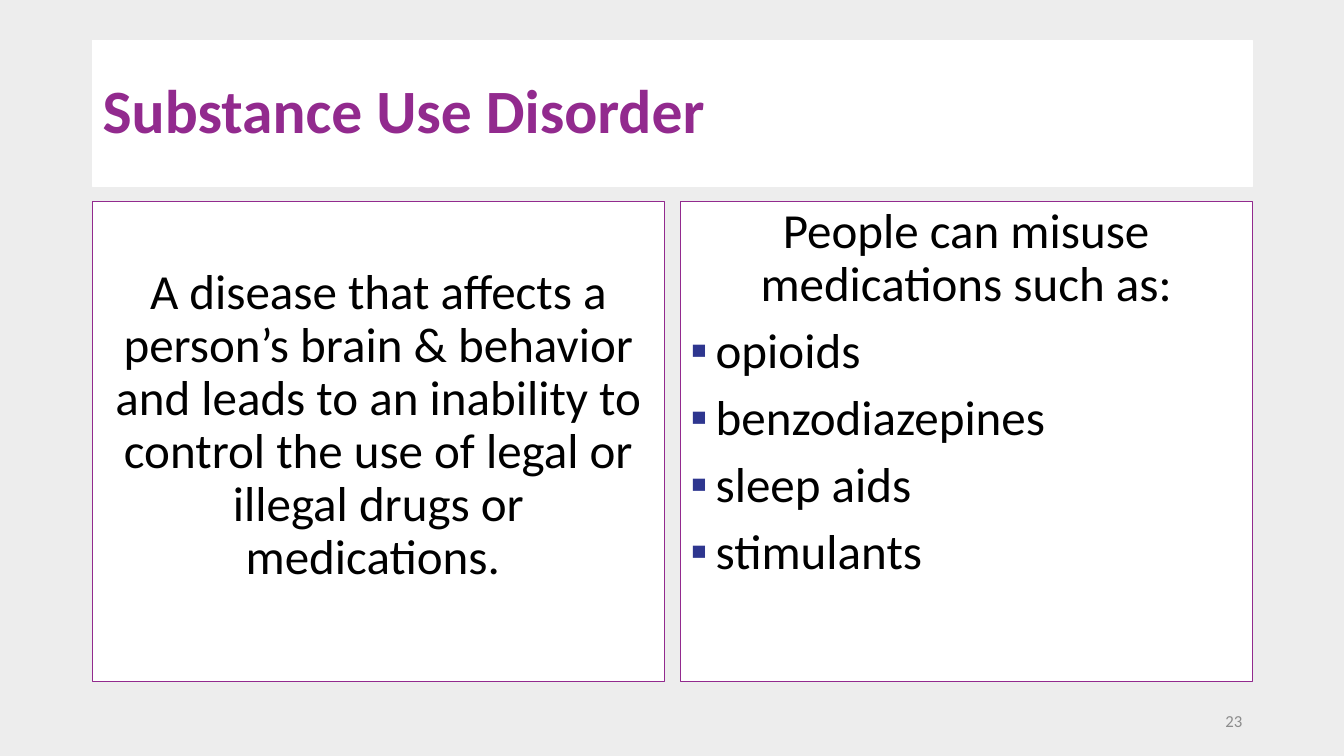
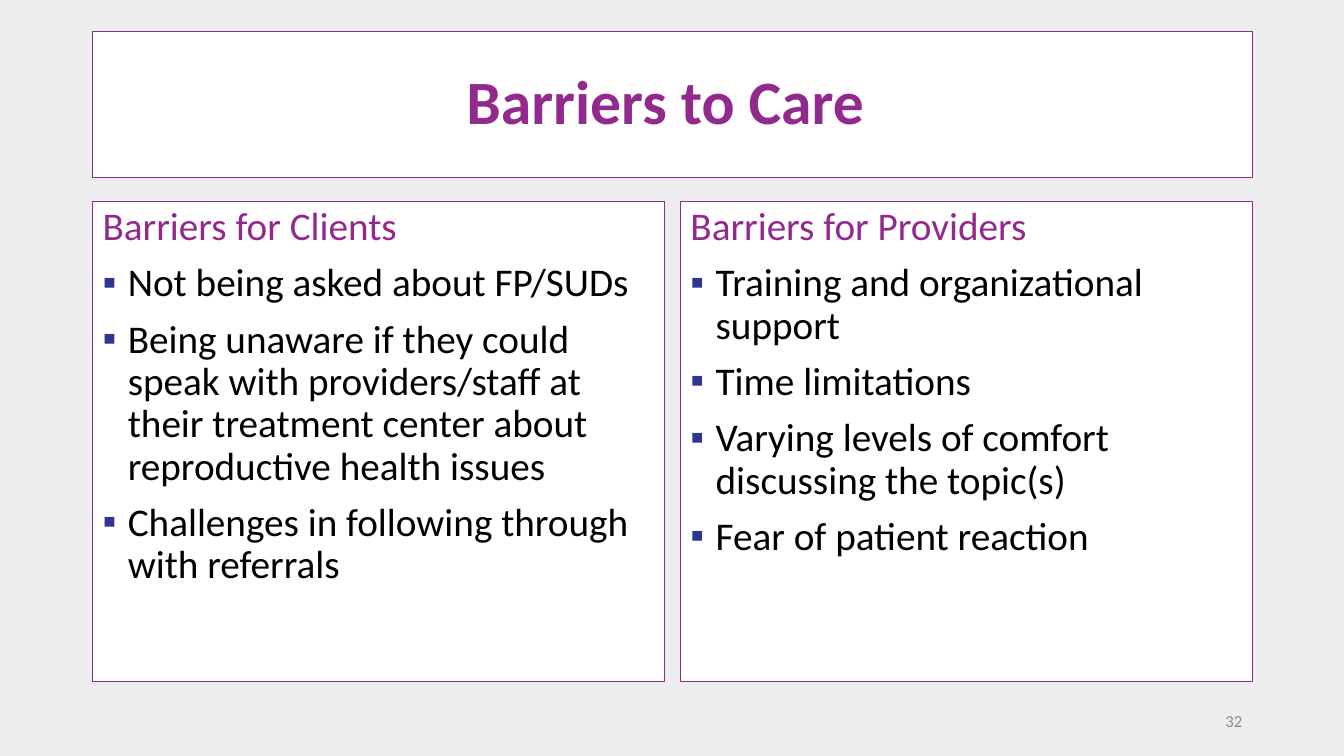
from lxml import etree
from pptx import Presentation
from pptx import util as u
from pptx.dml.color import RGBColor
from pptx.enum import shapes, text
from pptx.oxml import ns

PX = 9144
FONT = "Calibri"
PURPLE = RGBColor(0x92, 0x2A, 0x8E)
NAVY = RGBColor(0x2E, 0x36, 0x8F)
BLACK = RGBColor(0, 0, 0)
WHITE = RGBColor(0xFF, 0xFF, 0xFF)
GRAY = RGBColor(0x8C, 0x8C, 0x8C)
BACKGROUND = RGBColor(0xED, 0xED, 0xED)

LEFT = 92
WIDTH = 1150
TITLE_HEIGHT = 145
PANEL_TOP = 200
PANEL_WIDTH = 567
PANEL_HEIGHT = 476
PANEL_LEFTS = (LEFT, LEFT + WIDTH - PANEL_WIDTH)
INDENT = 25
ALIGN = text.PP_ALIGN
ANCHOR = text.MSO_ANCHOR


def px(length):
    return u.Emu(length * PX)


class SlideBuilder:
    def __init__(self):
        self.deck = Presentation()
        self.deck.slide_width = u.Inches(13.33)
        self.deck.slide_height = u.Inches(7.5)
        self.page = None

    def new_page(self, number):
        self.page = self.deck.slides.add_slide(self.deck.slide_layouts[6])
        fill = self.page.background.fill
        fill.solid()
        fill.fore_color.rgb = BACKGROUND
        box = self.page.shapes.add_textbox(px(942), px(695), px(300), px(40))
        self.frame(box, ANCHOR.MIDDLE)
        self.line(box, number, 12, GRAY, ALIGN.RIGHT, spacing=1.0)

    def frame(self, box, anchor, inset=5):
        frame = box.text_frame
        frame.word_wrap = True
        frame.vertical_anchor = anchor
        frame.margin_left = frame.margin_right = px(10)
        frame.margin_top = px(inset)
        frame.margin_bottom = px(5)

    def card(self, left, top, width, height, border, anchor, inset=5):
        box = self.page.shapes.add_shape(
            shapes.MSO_SHAPE.RECTANGLE, px(left), px(top), px(width), px(height))
        box.shadow.inherit = False
        box.fill.solid()
        box.fill.fore_color.rgb = WHITE
        box.line.color.rgb = border
        box.line.width = u.Pt(0.75)
        self.frame(box, anchor, inset)
        return box

    def line(self, box, words, size, color, align=ALIGN.LEFT, bold=False,
             bullet=False, spacing=0.9):
        frame = box.text_frame
        first = not frame.paragraphs[0].runs
        para = frame.paragraphs[0] if first else frame.add_paragraph()
        if bullet:
            self.bullet(para)
        para.alignment = align
        para.line_spacing = spacing
        para.space_before = u.Pt(0 if first else 10)
        span = para.add_run()
        span.text = words
        span.font.name = FONT
        span.font.size = u.Pt(size)
        span.font.bold = bold
        span.font.color.rgb = color

    def bullet(self, para):
        properties = para._p.get_or_add_pPr()
        properties.set("marL", str(px(INDENT)))
        properties.set("indent", str(px(-INDENT)))
        tint = etree.SubElement(properties, ns.qn("a:buClr"))
        etree.SubElement(tint, ns.qn("a:srgbClr"), val=str(NAVY))
        etree.SubElement(properties, ns.qn("a:buFont"), typeface="Arial")
        etree.SubElement(properties, ns.qn("a:buChar"), char="▪")

    def title(self, words, top, border, align):
        box = self.card(LEFT, top, WIDTH, TITLE_HEIGHT, border, ANCHOR.MIDDLE)
        self.line(box, words, 44, PURPLE, align, bold=True)

    def panel(self, column, heading, items, size, color, align=ALIGN.LEFT, inset=5):
        box = self.card(PANEL_LEFTS[column], PANEL_TOP, PANEL_WIDTH, PANEL_HEIGHT,
                        PURPLE, ANCHOR.TOP, inset)
        self.line(box, heading, size, color, align)
        for item in items:
            self.line(box, item, size, BLACK, bullet=True)


def main():
    builder = SlideBuilder()

    builder.new_page("23")
    builder.title("Substance Use Disorder", 40, WHITE, ALIGN.LEFT)
    builder.panel(
        0,
        "A disease that affects a person’s brain & behavior and leads to an "
        "inability to control the use of legal or illegal drugs or medications. ",
        [], 35, BLACK, ALIGN.CENTER, inset=65)
    builder.panel(
        1, "People can misuse medications such as:",
        ["opioids", "benzodiazepines", "sleep aids", "stimulants"],
        35, BLACK, ALIGN.CENTER)

    builder.new_page("32")
    builder.title("Barriers to Care ", 31, PURPLE, ALIGN.CENTER)
    builder.panel(
        0, "Barriers for Clients",
        ["Not being asked about FP/SUDs",
         "Being unaware if they could speak with providers/staff at their "
         "treatment center about reproductive health issues",
         "Challenges in following through with referrals"],
        28, PURPLE)
    builder.panel(
        1, "Barriers for Providers",
        ["Training and organizational support",
         "Time limitations",
         "Varying levels of comfort discussing the topic(s)",
         "Fear of patient reaction"],
        28, PURPLE)

    builder.deck.save("out.pptx")


if __name__ == "__main__":
    main()
